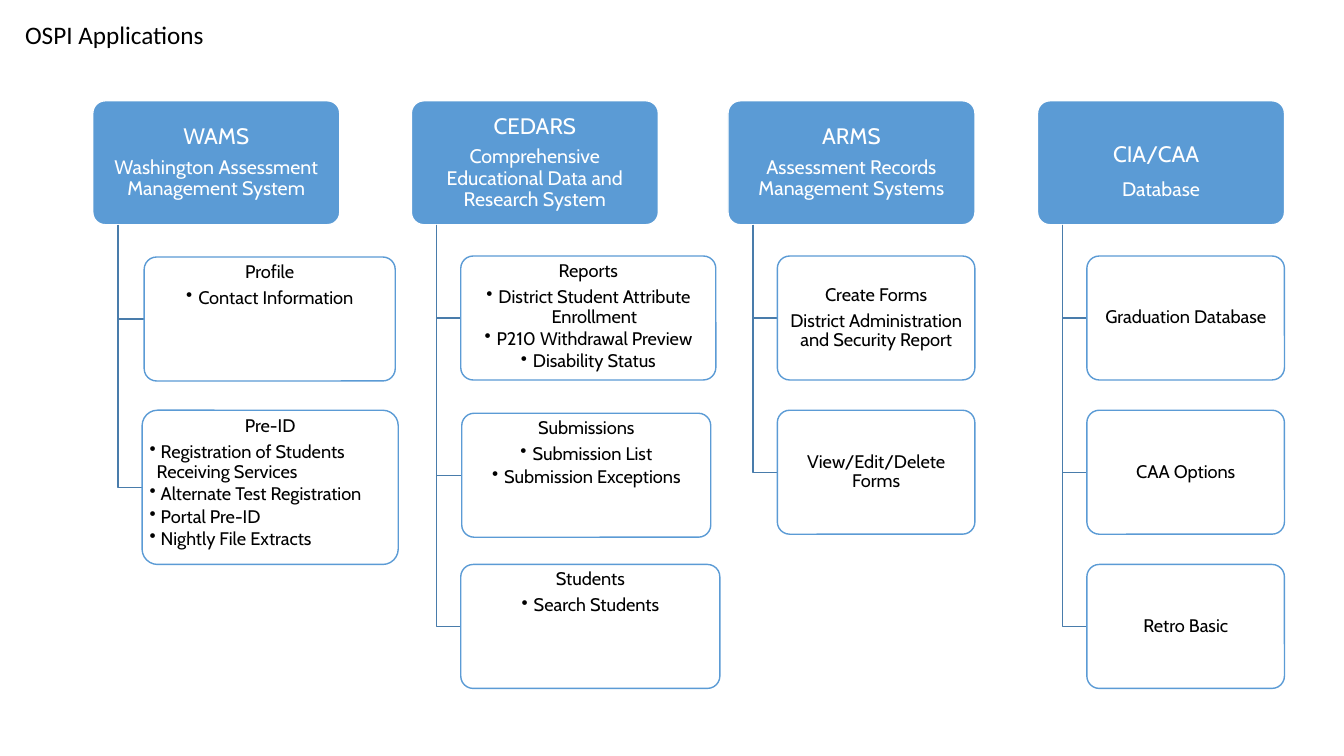
"""Build the OSPI Applications slide: four systems, each with a branch of feature boxes."""
from lxml import etree
from pptx import Presentation
from pptx import util as u
from pptx.dml.color import RGBColor
from pptx.enum import shapes, text
from pptx.oxml import ns

BLUE = RGBColor(0x5B, 0x9B, 0xD5)
STEM_BLUE = RGBColor(0x49, 0x7C, 0xAB)
WHITE = RGBColor(0xFF, 0xFF, 0xFF)
BLACK = RGBColor(0, 0, 0)

HEADER_TOP, HEADER_WIDTH, BOX_HEIGHT = 1, 2.45, 1.23
HEADER_MARGIN, BOX_MARGIN = 0.14, 0.03
FIRST_ROW, ROW_PITCH = 2.54, 1.53
STEM_OFFSET, BOX_OFFSET = 0.25, 0.49
MIDDLE, TOP = text.MSO_ANCHOR.MIDDLE, text.MSO_ANCHOR.TOP
CENTER, LEFT = text.PP_ALIGN.CENTER, text.PP_ALIGN.LEFT


def add_box(slide, left, top, width, height, fill, line, anchor, margin):
    """Add a rounded box and return it."""
    shape = slide.shapes.add_shape(
        shapes.MSO_SHAPE.ROUNDED_RECTANGLE,
        u.Inches(left), u.Inches(top), u.Inches(width), u.Inches(height))
    shape.adjustments[0] = 0.1
    shape.shadow.inherit = False
    shape.fill.solid()
    shape.fill.fore_color.rgb = fill
    shape.line.color.rgb = line
    shape.line.width = u.Pt(1)
    frame = shape.text_frame
    frame.word_wrap = True
    frame.vertical_anchor = anchor
    frame.margin_left = frame.margin_right = u.Inches(margin)
    frame.margin_top = frame.margin_bottom = u.Inches(0.02)
    return shape


def add_line(shape, index, runs, color, align=CENTER, hang=0):
    """Add a paragraph of (words, size) runs, bulleted when it has a hanging indent."""
    frame = shape.text_frame
    paragraph = frame.add_paragraph() if index else frame.paragraphs[0]
    if hang:
        paragraph.level = 1
        properties = paragraph._p.get_or_add_pPr()
        properties.set("marL", str(u.Inches(hang)))
        properties.set("indent", str(-u.Inches(hang)))
        etree.SubElement(properties, ns.qn("a:buChar")).set("char", "•")
    paragraph.alignment = align
    paragraph.line_spacing = 0.9
    paragraph.space_after = u.Pt(runs[0][1] * (0.15 if hang else 0.35))
    for words, size in runs:
        run = paragraph.add_run()
        run.text = words
        run.font.name = "Cabin"
        run.font.size = u.Pt(size)
        run.font.color.rgb = color


# Each box: row, horizontal nudge, vertical nudge, width, height, plain lines, bullets, alignment, hang
COLUMNS = [
    (0.92, [("WAMS", 16)], "Washington Assessment Management System", [
        (0, 0.02, 0.01, 2.49, BOX_HEIGHT, ["Profile"], ["Contact Information"], CENTER, 0.12),
        (1, 0, 0, 2.54, 1.53, ["Pre-ID"],
         [" Registration of Students Receiving Services", " Alternate Test Registration",
          " Portal Pre-ID", " Nightly File Extracts"], LEFT, 0.07),
    ]),
    (4.08, [("CEDARS", 16)], "Comprehensive Educational Data and Research System", [
        (0, 0, 0, 2.53, BOX_HEIGHT, ["Reports"],
         ["District Student Attribute Enrollment", "P210 Withdrawal Preview",
          "Disability Status"], CENTER, 0.12),
        (1, 0.01, 0.03, 2.47, BOX_HEIGHT, ["Submissions"],
         ["Submission List", "Submission Exceptions"], CENTER, 0.12),
        (2, 0, 0, 2.57, BOX_HEIGHT, ["Students"], ["Search Students"], CENTER, 0.12),
    ]),
    (7.22, [("ARMS", 16)], "Assessment Records Management Systems", [
        (0, 0, 0, 1.96, BOX_HEIGHT,
         ["Create Forms", "District Administration and Security Report"], [], CENTER, 0),
        (1, 0, 0, 1.96, BOX_HEIGHT, ["View/Edit/Delete Forms"], [], CENTER, 0),
    ]),
    (10.29, [("CIA/CAA", 16), (" ", 31)], "Database", [
        (row, 0, 0, 1.96, BOX_HEIGHT, [label], [], CENTER, 0)
        for row, label in enumerate(["Graduation Database", "CAA Options", "Retro Basic"])
    ]),
]

presentation = Presentation()
presentation.slide_width, presentation.slide_height = u.Inches(13.33), u.Inches(7.5)
slide = presentation.slides.add_slide(presentation.slide_layouts[6])

for column_left, name, full_name, boxes in COLUMNS:
    header = add_box(slide, column_left, HEADER_TOP, HEADER_WIDTH, BOX_HEIGHT,
                     BLUE, WHITE, MIDDLE, HEADER_MARGIN)
    add_line(header, 0, name, WHITE)
    add_line(header, 1, [(full_name, 14)], WHITE)

    for row, nudge_x, nudge_y, width, height, plain, bullets, align, hang in boxes:
        left = column_left + BOX_OFFSET + nudge_x
        top = FIRST_ROW + row * ROW_PITCH + nudge_y
        stem_x, middle = column_left + STEM_OFFSET, top + height / 2
        builder = slide.shapes.build_freeform(
            u.Inches(stem_x), u.Inches(HEADER_TOP + BOX_HEIGHT))
        builder.add_line_segments(
            [(u.Inches(stem_x), u.Inches(middle)), (u.Inches(left), u.Inches(middle))], close=False)
        stem = builder.convert_to_shape()
        stem.shadow.inherit = False
        stem.fill.background()
        stem.line.color.rgb = STEM_BLUE
        stem.line.width = u.Pt(1)

        box = add_box(slide, left, top, width, height,
                      WHITE, BLUE, TOP if bullets else MIDDLE, BOX_MARGIN)
        color = box._element.spPr.find(ns.qn("a:solidFill"))[0]
        etree.SubElement(color, ns.qn("a:alpha")).set("val", "90000")
        for index, words in enumerate(plain):
            add_line(box, index, [(words, 13)], BLACK)
        for index, words in enumerate(bullets, len(plain)):
            add_line(box, index, [(words, 13)], BLACK, align, hang)

title = slide.shapes.add_textbox(u.Inches(0.15), u.Inches(0.14), u.Inches(1.99), u.Inches(0.4))
title.text_frame.word_wrap = False
title.text_frame.auto_size = text.MSO_AUTO_SIZE.SHAPE_TO_FIT_TEXT
run = title.text_frame.paragraphs[0].add_run()
run.text = "OSPI Applications"
run.font.name = "Calibri"
run.font.size = u.Pt(18)
run.font.color.rgb = BLACK

presentation.save("out.pptx")
